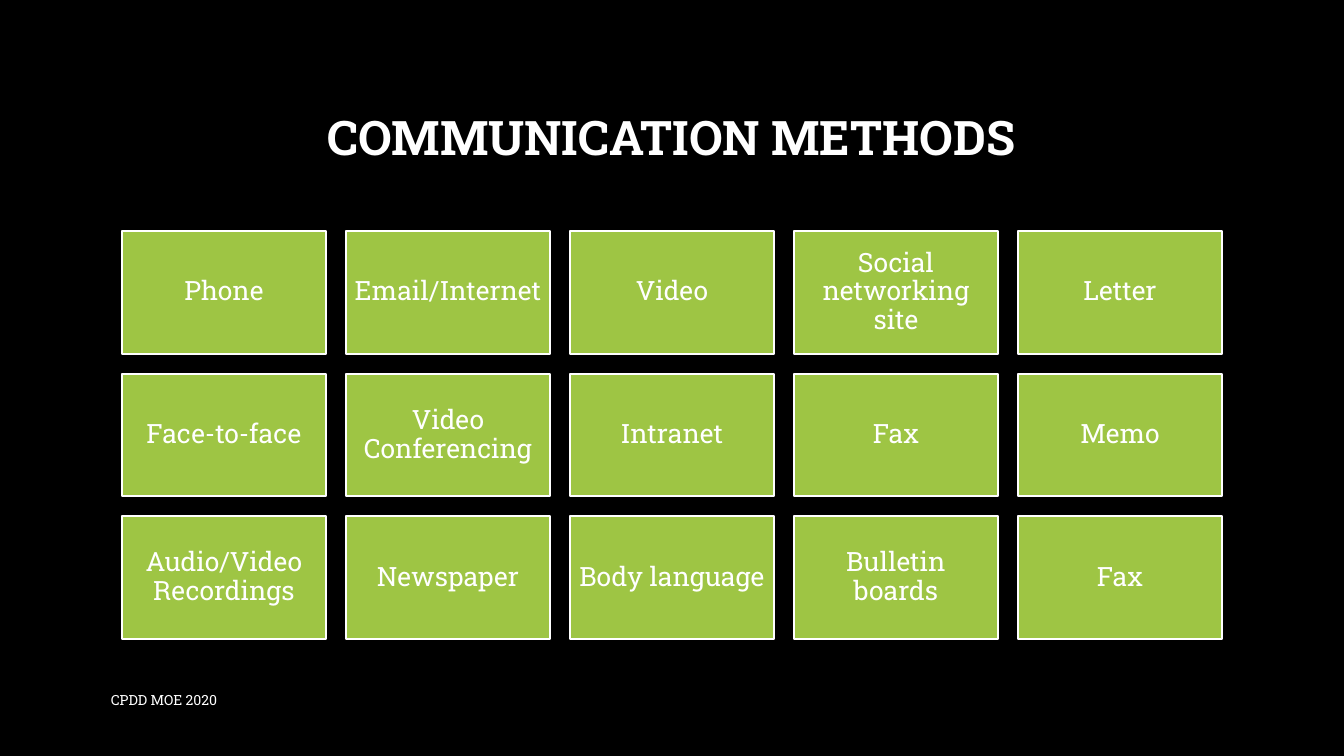
from pptx import Presentation
from pptx.dml.color import RGBColor
from pptx.enum.shapes import MSO_SHAPE
from pptx.enum.text import MSO_ANCHOR, PP_ALIGN
from pptx.util import Pt

RECTANGLE = MSO_SHAPE.RECTANGLE
MIDDLE = MSO_ANCHOR.MIDDLE
CENTER, LEFT = PP_ALIGN.CENTER, PP_ALIGN.LEFT
EMU_PER_PX = 914400 / 100.8
FONT = "Roboto Slab"
BLACK, WHITE, GREEN = "000000", "FFFFFF", "9EC544"
METHODS = [
    ["Phone", "Email/Internet", "Video", "Social networking site", "Letter"],
    ["Face-to-face", "Video Conferencing", "Intranet", "Fax", "Memo"],
    ["Audio/Video Recordings", "Newspaper", "Body language", "Bulletin boards", "Fax"],
]


def px(length):
    """Turn pixels into EMU."""
    return round(length * EMU_PER_PX)


def color(code):
    """Turn a hex string into a colour."""
    return RGBColor.from_string(code)


def write(frame, words, size, align=CENTER, bold=False, spacing=0.9, inset=(10, 5)):
    """Set and format one paragraph in a text frame."""
    frame.word_wrap = True
    frame.vertical_anchor = MIDDLE
    frame.margin_left = frame.margin_right = px(inset[0])
    frame.margin_top = frame.margin_bottom = px(inset[1])
    frame.text = words
    paragraph = frame.paragraphs[0]
    paragraph.alignment = align
    paragraph.line_spacing = spacing
    font = paragraph.runs[0].font
    font.name, font.size, font.bold = FONT, Pt(size), bold
    font.color.rgb = color(WHITE)


def add_heading(slide, box):
    """Place the slide title in its box."""
    heading = slide.shapes.add_textbox(*map(px, box))
    write(heading.text_frame, "COMMUNICATION METHODS", 34, bold=True)


def add_tile(slide, box, method):
    """Place one green tile that names a method."""
    tile = slide.shapes.add_shape(RECTANGLE, *map(px, box))
    tile.shadow.inherit = False
    tile.fill.solid()
    tile.fill.fore_color.rgb = color(GREEN)
    tile.line.color.rgb = color(WHITE)
    tile.line.width = Pt(1.5)
    write(tile.text_frame, method, 19, inset=(8, 8))


def add_method_grid(slide, box, gap):
    """Spread the method tiles evenly over the box."""
    left, top, width, height = box
    tile_width = (width + gap) / len(METHODS[0]) - gap
    tile_height = (height + gap) / len(METHODS) - gap
    for row, methods in enumerate(METHODS):
        for column, method in enumerate(methods):
            x = left + column * (tile_width + gap)
            y = top + row * (tile_height + gap)
            add_tile(slide, (x, y, tile_width, tile_height), method)


def add_footer(slide, box):
    """Place the footer line in its box."""
    footer = slide.shapes.add_textbox(*map(px, box))
    write(footer.text_frame, "CPDD MOE 2020", 10, align=LEFT, spacing=1.0)


def main():
    """Build and save the slide."""
    deck = Presentation()
    deck.slide_width, deck.slide_height = px(1344), px(756)
    slide = deck.slides.add_slide(deck.slide_layouts[6])
    slide.background.fill.solid()
    slide.background.fill.fore_color.rgb = color(BLACK)
    add_heading(slide, (101, 67, 1141, 146))
    add_method_grid(slide, (122, 231, 1100, 408), 20)
    add_footer(slide, (101, 680, 736, 40))
    deck.save("out.pptx")


if __name__ == "__main__":
    main()
